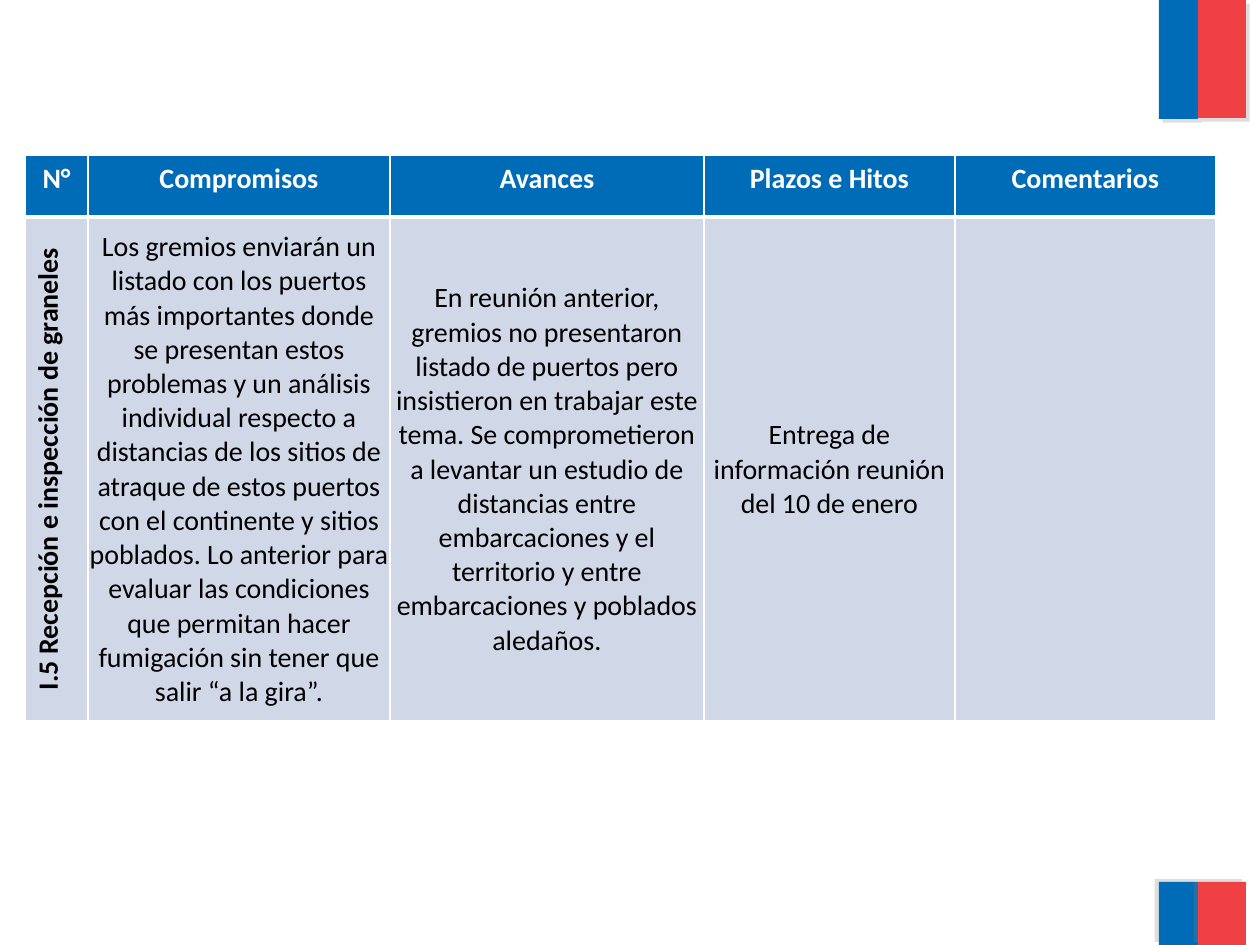
"""Build the slide that tracks commitments on bulk cargo reception and inspection."""
from dataclasses import dataclass

from lxml import etree
from pptx import Presentation
from pptx.dml.color import RGBColor
from pptx.enum.shapes import MSO_SHAPE
from pptx.enum.text import MSO_ANCHOR, PP_ALIGN
from pptx.oxml.ns import qn
from pptx.util import Emu, Pt

RECTANGLE = MSO_SHAPE.RECTANGLE
CENTER = PP_ALIGN.CENTER
TOP, MIDDLE = MSO_ANCHOR.TOP, MSO_ANCHOR.MIDDLE

EMU_PER_PX = 914400 / 126
BLUE, RED, PALE = "006CB7", "EF4144", "D0D8E8"
WHITE, BLACK, GRAY = "FFFFFF", "000000", "808080"

TABLE_LEFT, TABLE_TOP = 25, 155
COLUMN_WIDTHS = (63, 302, 314, 251, 261)
ROW_HEIGHTS = (62, 504)
HEADINGS = ("N°", "Compromisos", "Avances", "Plazos e Hitos", "Comentarios")
TOPIC = "I.5 Recepción e inspección de graneles"
DETAILS = (
    "Los gremios enviarán un listado con los puertos más importantes donde se "
    "presentan estos problemas y un análisis individual respecto a distancias de "
    "los sitios de atraque de estos puertos con el continente y sitios poblados. "
    "Lo anterior para evaluar las condiciones que permitan hacer fumigación sin "
    "tener que salir “a la gira”.",
    "En reunión anterior, gremios no presentaron listado de puertos pero "
    "insistieron en trabajar este tema. Se comprometieron a levantar un estudio de "
    "distancias entre embarcaciones y el territorio y entre embarcaciones y "
    "poblados aledaños.",
    "Entrega de información reunión del 10 de enero",
    "",
)


@dataclass(frozen=True)
class Band:
    """A coloured band in the right margin, with the angle of its shadow."""
    left: int
    top: int
    width: int
    height: int
    color: str
    shadow_angle: int


BANDS = (
    Band(1159, -1, 39, 120, BLUE, 45),
    Band(1198, 0, 48, 118, RED, 45),
    Band(1159, 882, 39, 63, BLUE, 215),
    Band(1198, 882, 48, 63, RED, 215),
)


def px(length: int) -> Emu:
    """Turn pixels into EMU."""
    return Emu(round(length * EMU_PER_PX))


def rgb(color: str) -> RGBColor:
    """Turn a hex string into a colour."""
    return RGBColor.from_string(color)


def add_color(parent, color: str):
    """Append a hex colour element and return it."""
    return etree.SubElement(parent, qn("a:srgbClr"), val=color)


def draw_band(slide, band: Band) -> None:
    """Draw a band with a hard, translucent shadow."""
    box = map(px, (band.left, band.top, band.width, band.height))
    bar = slide.shapes.add_shape(RECTANGLE, *box)
    bar.fill.solid()
    bar.fill.fore_color.rgb = rgb(band.color)
    bar.line.fill.background()
    bar.shadow.inherit = False
    effects = bar.fill._xPr.find(qn("a:effectLst"))
    shadow = etree.SubElement(
        effects, qn("a:outerShdw"), blurRad="0", dist=str(Pt(3)),
        dir=str(band.shadow_angle * 60000), algn="ctr", rotWithShape="0")
    etree.SubElement(add_color(shadow, GRAY), qn("a:alpha"), val="25000")


def set_borders(cell, top: int = 1, bottom: int = 1) -> None:
    """Give a cell white borders, with widths in points."""
    properties = cell._tc.get_or_add_tcPr()
    widths = {"a:lnL": 1, "a:lnR": 1, "a:lnT": top, "a:lnB": bottom}
    for side, width in widths.items():
        line = etree.SubElement(properties, qn(side), w=str(Pt(width)))
        add_color(etree.SubElement(line, qn("a:solidFill")), WHITE)


def write(cell, text: str, *, color: str = BLACK, bold: bool = False,
          anchor: MSO_ANCHOR = TOP) -> None:
    """Write centred text in a cell."""
    cell.vertical_anchor = anchor
    paragraph = cell.text_frame.paragraphs[0]
    paragraph.alignment = CENTER
    if not text:
        return
    run = paragraph.add_run()
    run.text = text
    run.font.name = "Calibri"
    run.font.size = Pt(16)
    run.font.bold = bold
    run.font.color.rgb = rgb(color)


def fill_cell(cell, color: str) -> None:
    """Fill a cell with one colour."""
    cell.fill.solid()
    cell.fill.fore_color.rgb = rgb(color)


def draw_commitments(slide) -> None:
    """Draw the table of commitments."""
    table = slide.shapes.add_table(
        len(ROW_HEIGHTS), len(COLUMN_WIDTHS), px(TABLE_LEFT), px(TABLE_TOP),
        px(sum(COLUMN_WIDTHS)), px(sum(ROW_HEIGHTS))).table
    for column, width in zip(table.columns, COLUMN_WIDTHS):
        column.width = px(width)
    for row, height in zip(table.rows, ROW_HEIGHTS):
        row.height = px(height)
    header, body = (row.cells for row in table.rows)

    for cell, heading in zip(header, HEADINGS):
        set_borders(cell, bottom=3)
        fill_cell(cell, BLUE)
        write(cell, heading, color=WHITE, bold=True)

    for index, (cell, text) in enumerate(zip(body, (TOPIC, *DETAILS))):
        is_topic = index == 0
        set_borders(cell, top=3)
        fill_cell(cell, PALE)
        write(cell, text, bold=is_topic, anchor=TOP if is_topic else MIDDLE)
        if is_topic:
            cell._tc.get_or_add_tcPr().set("vert", "vert270")
        else:
            cell.margin_left = cell.margin_right = cell.margin_top = px(1)
            cell.margin_bottom = 0


def main() -> None:
    """Build and save the slide."""
    deck = Presentation()
    deck.slide_width, deck.slide_height = px(1260), px(945)
    slide = deck.slides.add_slide(deck.slide_layouts[6])
    for band in BANDS:
        draw_band(slide, band)
    draw_commitments(slide)
    deck.save("out.pptx")


if __name__ == "__main__":
    main()
